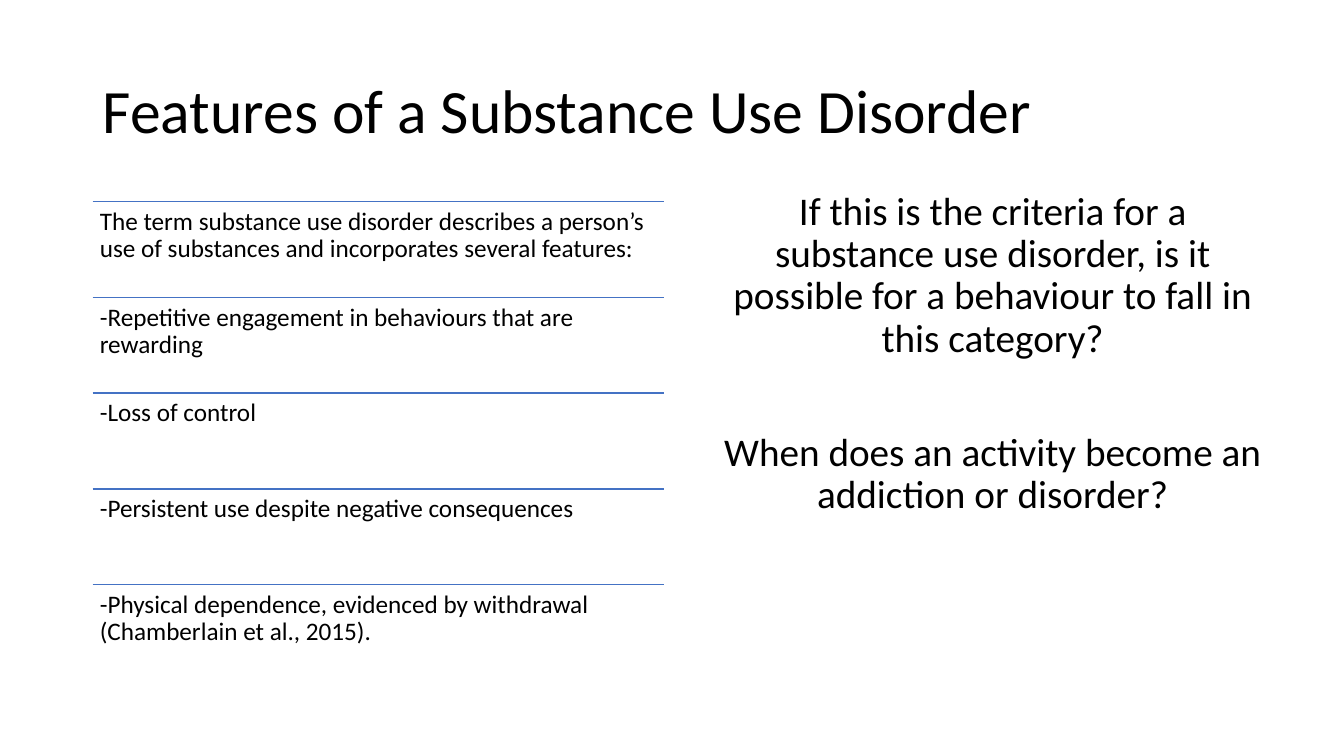
from dataclasses import dataclass

from lxml import etree
from pptx import Presentation
from pptx.dml.color import RGBColor
from pptx.enum.shapes import MSO_CONNECTOR
from pptx.enum.text import MSO_ANCHOR, MSO_AUTO_SIZE, PP_ALIGN
from pptx.oxml.ns import qn
from pptx.util import Inches, Pt

STRAIGHT = MSO_CONNECTOR.STRAIGHT
TOP, MIDDLE = MSO_ANCHOR.TOP, MSO_ANCHOR.MIDDLE
LEFT, CENTER = PP_ALIGN.LEFT, PP_ALIGN.CENTER
NO_AUTOFIT = MSO_AUTO_SIZE.NONE

TITLE = "Features of a Substance Use Disorder"
FEATURES = [
    "The term substance use disorder describes a person’s use of substances "
    "and incorporates several features:",
    "-Repetitive engagement in behaviours that are rewarding",
    "-Loss of control",
    "-Persistent use despite negative consequences",
    "-Physical dependence, evidenced by withdrawal (Chamberlain et al., 2015).",
]
# Each question with the space before it, in points
QUESTIONS = [
    ("If this is the criteria for a substance use disorder, is it possible "
     "for a behaviour to fall in this category?", 10),
    ("When does an activity become an addiction or disorder?", 51),
]


@dataclass(frozen=True)
class Theme:
    font: str = "Calibri"
    text: RGBColor = RGBColor(0x00, 0x00, 0x00)
    rule: RGBColor = RGBColor(0x44, 0x72, 0xC4)
    title_size: Pt = Pt(44)
    feature_size: Pt = Pt(18)
    question_size: Pt = Pt(28)
    rule_width: Pt = Pt(1)
    line_spacing: float = 0.9


THEME = Theme()
MARGIN = Inches(0.92)
COLUMN_WIDTH = Inches(5.67)
FEATURES_TOP = Inches(2)
ROW_HEIGHT = Inches(0.95)
FEATURE_INSET = Inches(0.07)


def prepare_frame(frame, anchor):
    frame.word_wrap = True
    frame.auto_size = NO_AUTOFIT
    frame.vertical_anchor = anchor


def write_paragraph(paragraph, text, size, align=LEFT):
    paragraph.text = text
    paragraph.alignment = align
    paragraph.line_spacing = THEME.line_spacing
    font = paragraph.runs[0].font
    font.name, font.size = THEME.font, size
    font.color.rgb = THEME.text


def add_title(slide):
    title = slide.shapes.title
    title.left, title.top = MARGIN, Inches(0.4)
    title.width, title.height = Inches(11.5), Inches(1.45)
    prepare_frame(title.text_frame, MIDDLE)
    write_paragraph(title.text_frame.paragraphs[0], TITLE, THEME.title_size)


def add_feature(slide, text, top):
    """Add one feature row under its rule."""
    rule = slide.shapes.add_connector(
        STRAIGHT, MARGIN, top, MARGIN + COLUMN_WIDTH, top)
    rule.line.color.rgb = THEME.rule
    rule.line.width = THEME.rule_width
    etree.SubElement(rule._element.spPr, qn("a:effectLst"))

    feature = slide.shapes.add_textbox(MARGIN, top, COLUMN_WIDTH, ROW_HEIGHT)
    frame = feature.text_frame
    prepare_frame(frame, TOP)
    frame.margin_left = frame.margin_right = FEATURE_INSET
    frame.margin_top = frame.margin_bottom = FEATURE_INSET
    write_paragraph(frame.paragraphs[0], text, THEME.feature_size)


def add_questions(slide):
    questions = slide.shapes.add_textbox(
        Inches(7.01), Inches(1.85), COLUMN_WIDTH, Inches(4.76))
    frame = questions.text_frame
    prepare_frame(frame, TOP)
    frame.text = "\n".join(text for text, _ in QUESTIONS)
    for paragraph, (text, space_before) in zip(frame.paragraphs, QUESTIONS):
        write_paragraph(paragraph, text, THEME.question_size, CENTER)
        paragraph.space_before = Pt(space_before)


def main():
    presentation = Presentation()
    presentation.slide_width = Inches(13.33)
    presentation.slide_height = Inches(7.5)
    title_only = presentation.slide_layouts[5]
    slide = presentation.slides.add_slide(title_only)

    add_title(slide)
    for row, feature in enumerate(FEATURES):
        add_feature(slide, feature, FEATURES_TOP + row * ROW_HEIGHT)
    add_questions(slide)
    presentation.save("out.pptx")


if __name__ == "__main__":
    main()
